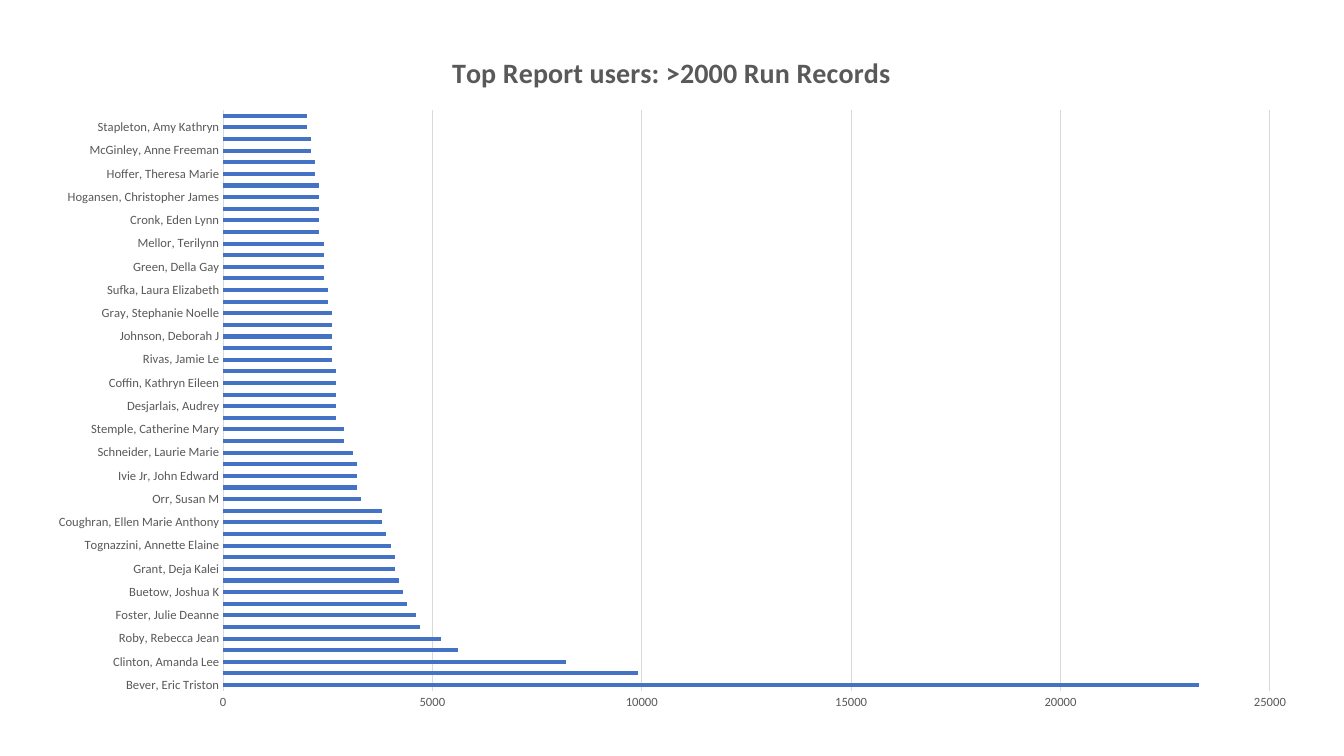
"""Build a slide with a bar chart of the heaviest report users."""
from lxml import etree
from pptx import Presentation
from pptx import util as u
from pptx.chart.data import CategoryChartData
from pptx.dml.color import RGBColor
from pptx.enum import chart as ch
from pptx.oxml.ns import qn

TITLE = "Top Report users: >2000 Run Records"
RUNS = [
    ("Bever, Eric Triston", 23300, 9900),
    ("Clinton, Amanda Lee", 8200, 5600),
    ("Roby, Rebecca Jean", 5200, 4700),
    ("Foster, Julie Deanne", 4600, 4400),
    ("Buetow, Joshua K", 4300, 4200),
    ("Grant, Deja Kalei", 4100, 4100),
    ("Tognazzini, Annette Elaine", 4000, 3900),
    ("Coughran, Ellen Marie Anthony", 3800, 3800),
    ("Orr, Susan M", 3300, 3200),
    ("Ivie Jr, John Edward", 3200, 3200),
    ("Schneider, Laurie Marie", 3100, 2900),
    ("Stemple, Catherine Mary", 2900, 2700),
    ("Desjarlais, Audrey", 2700, 2700),
    ("Coffin, Kathryn Eileen", 2700, 2700),
    ("Rivas, Jamie Le", 2600, 2600),
    ("Johnson, Deborah J", 2600, 2600),
    ("Gray, Stephanie Noelle", 2600, 2500),
    ("Sufka, Laura Elizabeth", 2500, 2400),
    ("Green, Della Gay", 2400, 2400),
    ("Mellor, Terilynn", 2400, 2300),
    ("Cronk, Eden Lynn", 2300, 2300),
    ("Hogansen, Christopher James", 2300, 2300),
    ("Hoffer, Theresa Marie", 2200, 2200),
    ("McGinley, Anne Freeman", 2100, 2100),
    ("Stapleton, Amy Kathryn", 2000, 2000),
]
BLUE = RGBColor(0x44, 0x72, 0xC4)
GRAY = RGBColor(0x59, 0x59, 0x59)
RULE = RGBColor(0xD9, 0xD9, 0xD9)
PX = 914400 / 100.8
SLIDE = (1344, 756)
CHART = (33, 32, 1277, 691)
PLOT = (223, 110, 1047, 581)
TITLE_AT = (447, 48)
AXIS_MAX, AXIS_STEP = 25000, 5000


def emu(px):
    """Turn px into EMU."""
    return u.Emu(round(px * PX))


def style(obj, **values):
    """Set each given attribute on an object."""
    for name, value in values.items():
        setattr(obj, name, value)


def style_font(font, size, bold=False):
    """Give text the chart's face and colour."""
    style(font, name="Calibri", size=u.Pt(size), bold=bold)
    font.color.rgb = GRAY


def style_rule(line):
    """Draw a thin light line."""
    line.color.rgb = RULE
    line.width = u.Pt(0.75)


def layout(box, inner=False):
    """Return a manual layout for a px box on the slide."""
    left, top, width, height = CHART
    places = [(box[0] - left) / width, (box[1] - top) / height]
    places += [box[2] / width, box[3] / height] if inner else []
    items = [("layoutTarget", "inner")] if inner else []
    items += [("xMode", "edge"), ("yMode", "edge")]
    items += [(key, f"{place:.4f}") for key, place in zip("xywh", places)]
    root = etree.Element(qn("c:layout"))
    manual = etree.SubElement(root, qn("c:manualLayout"))
    for tag, value in items:
        etree.SubElement(manual, qn(f"c:{tag}")).set("val", value)
    return root


def place(parent, index, new):
    """Put a layout into a chart element in place of any other."""
    for old in parent.findall(qn("c:layout")):
        parent.remove(old)
    parent.insert(index, new)


def main():
    """Make the slide and save it."""
    prs = Presentation()
    style(prs, slide_width=emu(SLIDE[0]), slide_height=emu(SLIDE[1]))
    s = prs.slides.add_slide(prs.slide_layouts[6])

    data = CategoryChartData()
    data.categories = [label for user, *_ in RUNS for label in (user, "")]
    data.add_series("Series 1", [n for _, *pair in RUNS for n in pair])
    chart = s.shapes.add_chart(
        ch.XL_CHART_TYPE.BAR_CLUSTERED, *map(emu, CHART), data).chart
    style(chart, has_legend=False, has_title=True)
    style_font(chart.font, 10)

    title = chart.chart_title
    title.include_in_layout = False
    p = title.text_frame.paragraphs[0]
    r = p.add_run()
    r.text = TITLE
    style_font(r.font, 20, True)
    place(title._element, 1, layout(TITLE_AT))
    place(chart._chartSpace.chart.plotArea, 0, layout(PLOT, True))

    plot = chart.plots[0]
    style(plot, gap_width=182, vary_by_categories=False)
    fill = plot.series[0].format.fill
    fill.solid()
    fill.fore_color.rgb = BLUE

    users, counts = chart.category_axis, chart.value_axis
    for axis in (users, counts):
        style(axis, major_tick_mark=ch.XL_TICK_MARK.NONE,
              minor_tick_mark=ch.XL_TICK_MARK.NONE)
        style_font(axis.tick_labels.font, 9)
    users.has_major_gridlines = False
    style_rule(users.format.line)
    style(counts, minimum_scale=0, maximum_scale=AXIS_MAX,
          major_unit=AXIS_STEP, has_major_gridlines=True)
    counts.format.line.fill.background()
    style_rule(counts.major_gridlines.format.line)

    prs.save("out.pptx")


if __name__ == "__main__":
    main()
